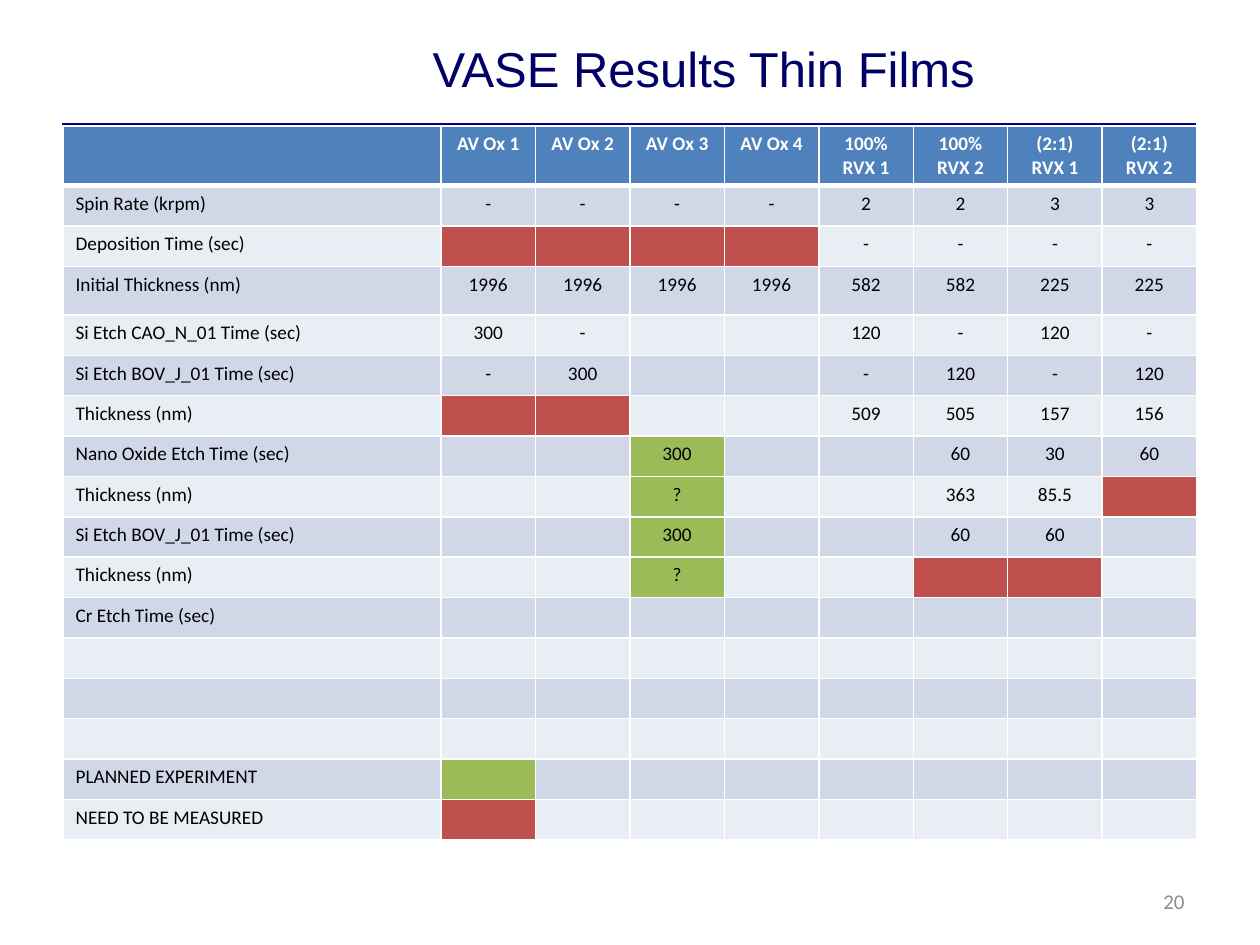
from lxml import etree
from pptx import Presentation
from pptx.dml.color import RGBColor
from pptx.enum.shapes import MSO_CONNECTOR
from pptx.enum.text import MSO_ANCHOR, PP_ALIGN
from pptx.oxml.ns import qn
from pptx.util import Cm, Pt

STRAIGHT = MSO_CONNECTOR.STRAIGHT
MIDDLE = MSO_ANCHOR.MIDDLE
LEFT, CENTER, RIGHT = PP_ALIGN.LEFT, PP_ALIGN.CENTER, PP_ALIGN.RIGHT

COLORS = {
    "title": "000066", "rule": "000099", "header": "4F81BD",
    "band_dark": "D0D8E8", "band_light": "E9EDF4",
    "planned": "9BBB59", "unmeasured": "C0504D",
    "white": "FFFFFF", "black": "000000", "number": "8C8C8C",
}
TITLE = {"name": "Arial", "size": Pt(28), "bold": False}
NUMBER = {"name": "Calibri", "size": Pt(12), "bold": False}
HEADER = {"name": "Calibri", "size": Pt(11), "bold": True}
BODY = {"name": "Calibri", "size": Pt(11), "bold": False}

LABEL_WIDTH = 7.62
HEADER_HEIGHT, TALL_HEIGHT, TALL_ROW = 1.2, 0.98, 3

ROWS = [
    ["", "AV Ox 1", "AV Ox 2", "AV Ox 3", "AV Ox 4",
     "100% RVX 1", "100% RVX 2", "(2:1) RVX 1", "(2:1) RVX 2"],
    ["Spin Rate (krpm)", "-", "-", "-", "-", "2", "2", "3", "3"],
    ["Deposition Time (sec)", "", "", "", "", "-", "-", "-", "-"],
    ["Initial Thickness (nm)", "1996", "1996", "1996", "1996",
     "582", "582", "225", "225"],
    ["Si Etch CAO_N_01 Time (sec)", "300", "-", "", "", "120", "-", "120", "-"],
    ["Si Etch BOV_J_01 Time (sec)", "-", "300", "", "", "-", "120", "-", "120"],
    ["Thickness (nm)", "", "", "", "", "509", "505", "157", "156"],
    ["Nano Oxide Etch Time (sec)", "", "", "300", "", "", "60", "30", "60"],
    ["Thickness (nm)", "", "", "?", "", "", "363", "85.5", ""],
    ["Si Etch BOV_J_01 Time (sec)", "", "", "300", "", "", "60", "60", ""],
    ["Thickness (nm)", "", "", "?", "", "", "", "", ""],
    ["Cr Etch Time (sec)"],
    [],
    [],
    [],
    ["PLANNED EXPERIMENT"],
    ["NEED TO BE MEASURED"],
]
MARKED = {
    "planned": {7: [3], 8: [3], 9: [3], 10: [3], 15: [1]},
    "unmeasured": {2: [1, 2, 3, 4], 6: [1, 2], 8: [8], 10: [6, 7], 16: [1]},
}


def color(name):
    return RGBColor.from_string(COLORS[name])


def write(para, text, style, color_name, align):
    para.alignment = align
    if not text:
        end = etree.SubElement(para._p, qn("a:endParaRPr"))
        end.set("sz", str(int(style["size"].pt * 100)))
        return
    span = para.add_run()
    span.text = text
    for key, value in style.items():
        setattr(span.font, key, value)
    span.font.color.rgb = color(color_name)


def add_text(page, box, text, style, color_name, align):
    frame = page.shapes.add_textbox(*map(Cm, box)).text_frame
    frame.word_wrap = True
    frame.vertical_anchor = MIDDLE
    write(frame.paragraphs[0], text, style, color_name, align)


def add_rule(page, left, top, width):
    rule = page.shapes.add_connector(
        STRAIGHT, Cm(left), Cm(top), Cm(left + width), Cm(top))
    rule.line.color.rgb = color("rule")
    rule.line.width = Pt(3)
    etree.SubElement(rule._element.spPr, qn("a:effectLst"))


def set_borders(cell, widths):
    properties = cell._tc.get_or_add_tcPr()
    for side, width in widths.items():
        line = etree.SubElement(properties, qn(f"a:ln{side}"), w=str(Pt(width)))
        fill = etree.SubElement(line, qn("a:solidFill"))
        etree.SubElement(fill, qn("a:srgbClr"), val=COLORS["white"])


def cell_color(row, column):
    if row == 0:
        return "header"
    for mark, places in MARKED.items():
        if column in places.get(row, []):
            return mark
    return "band_dark" if row % 2 else "band_light"


def add_results(page, box):
    width, height = box[2:]
    column_count = len(ROWS[0])
    value_width = (width - LABEL_WIDTH) / (column_count - 1)
    row_height = (height - HEADER_HEIGHT - TALL_HEIGHT) / (len(ROWS) - 2)
    heights = {0: HEADER_HEIGHT, TALL_ROW: TALL_HEIGHT}
    table = page.shapes.add_table(len(ROWS), column_count, *map(Cm, box)).table
    for index, column in enumerate(table.columns):
        column.width = Cm(value_width if index else LABEL_WIDTH)
    for row, values in enumerate(ROWS):
        table.rows[row].height = Cm(heights.get(row, row_height))
        style, text_color = (BODY, "black") if row else (HEADER, "white")
        borders = {"L": 1, "R": 1, "T": 3 if row == 1 else 1, "B": 1 if row else 3}
        for column in range(column_count):
            cell = table.cell(row, column)
            set_borders(cell, borders)
            cell.fill.solid()
            cell.fill.fore_color.rgb = color(cell_color(row, column))
            text = values[column] if column < len(values) else ""
            write(cell.text_frame.paragraphs[0], text, style, text_color,
                  CENTER if column else LEFT)


def main():
    deck = Presentation()
    deck.slide_width, deck.slide_height = Cm(25.4), Cm(19.05)
    page = deck.slides.add_slide(deck.slide_layouts[6])
    add_rule(page, 1.25, 2.54, 22.86)
    add_text(page, (4.24, 0.2, 19.89, 2.34), "VASE Results Thin Films",
             TITLE, "title", CENTER)
    add_results(page, (1.27, 2.54, 22.86, 14.4))
    add_text(page, (18.2, 17.65, 5.93, 1.02), "20", NUMBER, "number", RIGHT)
    deck.save("out.pptx")


if __name__ == "__main__":
    main()
